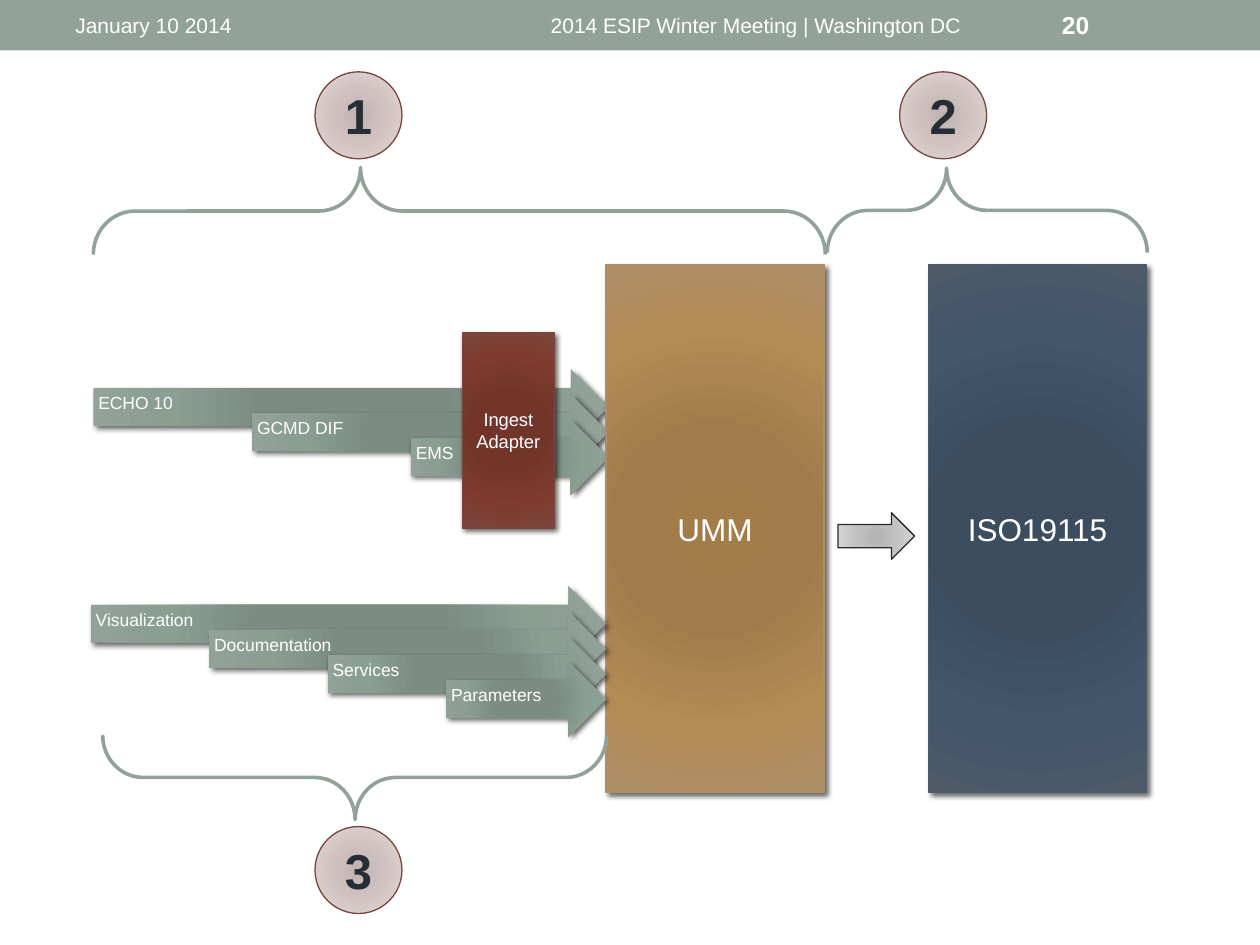
"""Build a slide on metadata flows through UMM to ISO19115."""
from dataclasses import dataclass

from pptx import Presentation
from pptx.dml.color import RGBColor
from pptx.enum.shapes import MSO_SHAPE
from pptx.enum.text import MSO_ANCHOR, PP_ALIGN
from pptx.oxml import parse_xml
from pptx.oxml.ns import nsdecls, qn
from pptx.util import Inches, Pt

RECT, OVAL = MSO_SHAPE.RECTANGLE, MSO_SHAPE.OVAL
ARROW, BRACE = MSO_SHAPE.RIGHT_ARROW, MSO_SHAPE.LEFT_BRACE
LEFT, CENTER = PP_ALIGN.LEFT, PP_ALIGN.CENTER


@dataclass(frozen=True)
class Theme:
    font: str = "Arial"
    white: str = "FFFFFF"
    ink: str = "262D35"
    edge: str = "292934"
    sage: str = "93A299"
    rust: str = "79463D"
    flow: tuple = ((0, "7B8E82"), (34, "7B8D83"), (70, "8A9E92"), (100, "93A299"))
    navy: tuple = ((0, "3B4D61"), (34, "3C4D60"), (70, "43566B"), (100, "4C5A6A"))
    gold: tuple = ((0, "A37D49"), (34, "A07C4C"), (70, "B38B55"), (100, "AD8F67"))
    brick: tuple = ((0, "743327"), (34, "72352A"), (70, "7F3B2F"), (100, "79463D"))
    gray: tuple = ((0, "B2B2B3"), (45, "C1C1C2"), (100, "DDDDDE"))
    blush: tuple = ((0, "C0B3B1"), (45, "D0C2C0"), (100, "E5DEDD"))
    label: float = 10
    small: float = 10.5
    head: float = 12
    page: float = 14
    block: float = 18
    badge: float = 28


T = Theme()
deck = Presentation()
deck.slide_width, deck.slide_height = Inches(10), Inches(7.5)
slide = deck.slides.add_slide(deck.slide_layouts[6])


def draw(kind, box, grad=None, line=None, width=0.75, shadow=False):
    shape = slide.shapes.add_shape(kind, *map(Inches, box))
    shape.shadow.inherit = False
    shape.fill.background()
    props = shape._element.spPr
    if grad:
        stops = "".join(
            f'<a:gs pos="{pos * 1000}"><a:srgbClr val="{tint}"/></a:gs>'
            for pos, tint in grad)
        props.replace(props.find(qn("a:noFill")), parse_xml(
            f'<a:gradFill {nsdecls("a")} rotWithShape="1"><a:gsLst>{stops}</a:gsLst>'
            '<a:path path="circle"><a:fillToRect l="100000" t="100000" '
            'r="100000" b="100000"/></a:path></a:gradFill>'))
    if line:
        shape.line.color.rgb = RGBColor.from_string(line)
        shape.line.width = Pt(width)
    else:
        shape.line.fill.background()
    if shadow:
        props.find(qn("a:effectLst")).append(parse_xml(
            f'<a:outerShdw {nsdecls("a")} blurRad="38100" dist="25400" dir="2700000" '
            'rotWithShape="0"><a:srgbClr val="000000"><a:alpha val="60000"/>'
            '</a:srgbClr></a:outerShdw>'))
    return shape


def write(shape, text, size, align=CENTER, color=T.white, bold=False):
    frame = shape.text_frame
    frame.word_wrap = True
    frame.vertical_anchor = MSO_ANCHOR.MIDDLE
    para = frame.paragraphs[0]
    para.text, para.alignment = text, align
    font = para.font
    font.name, font.size, font.bold = T.font, Pt(size), bold
    font.color.rgb = RGBColor.from_string(color)
    return frame


bar = draw(RECT, (0, 0, 10, 0.4))
bar.fill.solid()
bar.fill.fore_color.rgb = RGBColor.from_string(T.sage)

blocks = [
    ("ISO19115", (7.37, 2.1, 1.73, 4.19), T.navy, T.block),
    ("UMM", (4.81, 2.1, 1.73, 4.19), T.gold, T.block),
    ("Ingest Adapter", (3.67, 2.64, 0.73, 1.55), T.brick, T.small),
]
flows = [
    (0.74, 2.93, 4.83, 1.26, ["ECHO 10", "GCMD DIF", "EMS"], blocks),
    (0.72, 4.65, 4.81, 0.94,
     ["Visualization", "Documentation", "Services", "Parameters"], []),
]
for left, top, tip, step, names, cover in flows:
    for i, name in enumerate(names):
        x, y = left + i * step, top + i * 0.2
        draw(ARROW, (x, y, tip - x, 0.6), T.flow, shadow=True)
        box = slide.shapes.add_textbox(
            *map(Inches, (x, y + 0.15, tip - x - 0.15, 0.3)))
        frame = write(box, name, T.label, LEFT)
        frame.margin_left = frame.margin_top = Inches(0.04)
        frame.margin_right, frame.margin_bottom = Inches(0.28), Inches(0.09)
        frame.paragraphs[0].line_spacing = 0.9
    for name, spot, grad, size in cover:
        write(draw(RECT, spot, grad, grad[-1][1], shadow=True), name, size)

draw(ARROW, (6.65, 4.07, 0.61, 0.37), T.gray, T.edge)

braces = [
    ((3.3, -1.23, 0.69, 5.81), 90, 0.635),
    ((7.5, 0.4, 0.67, 2.54), 90, 0.627),
    ((2.48, 4.17, 0.67, 4), 270, 0.501),
]
for spot, turn, peak in braces:
    brace = draw(BRACE, spot, line=T.sage, width=2.08)
    brace.rotation = turn
    brace.adjustments[0], brace.adjustments[1] = 0.479, peak

for name, x, y in [("1", 2.5, 0.57), ("2", 7.14, 0.57), ("3", 2.5, 6.56)]:
    badge = draw(OVAL, (x, y, 0.69, 0.69), T.blush, T.rust)
    write(badge, name, T.badge, color=T.ink, bold=True)

heads = [
    ("January 10 2014", 0.5, 3.17, T.head, LEFT, False),
    ("2014 ESIP Winter Meeting | Washington DC", 3.75, 4.5, T.head, CENTER, False),
    ("20", 8.33, 1.17, T.page, LEFT, True),
]
for text, x, wide, size, align, bold in heads:
    box = slide.shapes.add_textbox(*map(Inches, (x, 0.02, wide, 0.36)))
    write(box, text, size, align, bold=bold)

deck.save("out.pptx")
